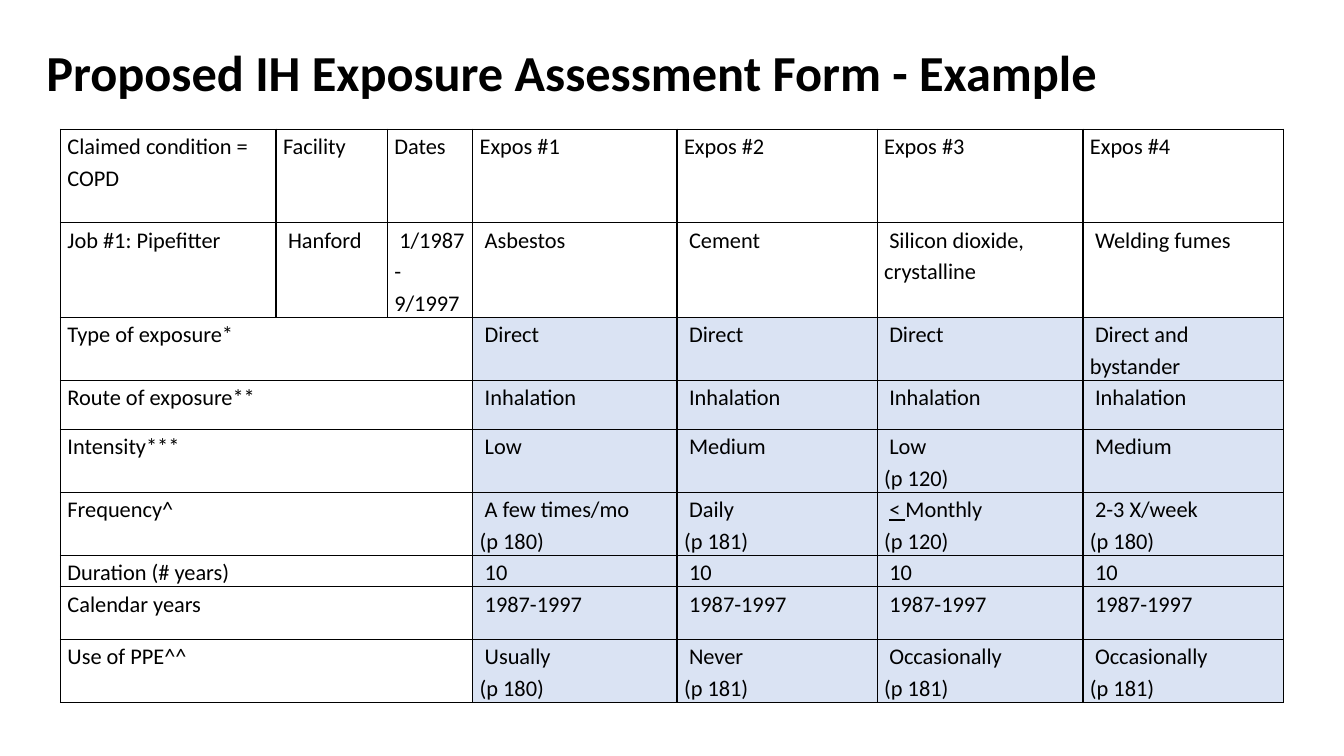
from lxml.etree import SubElement
from pptx import Presentation
from pptx.dml.color import RGBColor
from pptx.enum.text import MSO_ANCHOR
from pptx.oxml.ns import qn
from pptx.util import Pt

BLACK, WHITE, LIGHT_BLUE = "000000", "FFFFFF", "DAE3F3"


def color(value):
    return RGBColor.from_string(value)


def write(frame, text, size=16, bold=False, spacing=1.15, indent=0):
    """Write one paragraph per line; underline what stands between underscores."""
    frame.word_wrap = True
    for number, line in enumerate(text.split("\n")):
        paragraph = frame.paragraphs[0] if number == 0 else frame.add_paragraph()
        paragraph.line_spacing = spacing
        if indent and number == 0:
            paragraph._p.get_or_add_pPr().set("indent", str(Pt(indent)))
        for part, words in enumerate(line.split("_")):
            if not words:
                continue
            run = paragraph.add_run()
            run.text = words
            run.font.name = "Calibri"
            run.font.size = Pt(size)
            run.font.bold = bold
            run.font.underline = part % 2 == 1
            run.font.color.rgb = color(BLACK)


presentation = Presentation()
presentation.slide_width = Pt(960)
presentation.slide_height = Pt(540)
slide = presentation.slides.add_slide(presentation.slide_layouts[6])

title = slide.shapes.add_textbox(Pt(26), Pt(7), Pt(828), Pt(94)).text_frame
title.vertical_anchor = MSO_ANCHOR.MIDDLE
write(title, "Proposed IH Exposure Assessment Form - Example",
      size=36, bold=True, spacing=0.9)

# Rows with five entries have a label that spans the first three columns.
form_rows = [
    (67, ["Claimed condition = COPD", "Facility", "Dates",
          "Expos #1", "Expos #2", "Expos #3", "Expos #4"]),
    (67.5, ["Job #1: Pipefitter", "Hanford", "1/1987- 9/1997", "Asbestos",
            "Cement", "Silicon dioxide, crystalline", "Welding fumes"]),
    (45, ["Type of exposure*", "Direct", "Direct", "Direct",
          "Direct and bystander"]),
    (35, ["Route of exposure**"] + ["Inhalation"] * 4),
    (45, ["Intensity***", "Low", "Medium", "Low\n(p 120)", "Medium"]),
    (45, ["Frequency^", "A few times/mo\n(p 180)", "Daily\n(p 181)",
          "_< _Monthly\n(p 120)", "2-3 X/week\n(p 180)"]),
    (22.5, ["Duration (# years)"] + ["10"] * 4),
    (37.5, ["Calendar years"] + ["1987-1997"] * 4),
    (45, ["Use of PPE^^", "Usually\n(p 180)", "Never\n(p 181)",
          "Occasionally\n(p 181)", "Occasionally\n(p 181)"]),
]
column_widths = [154, 79.5, 61, 146, 143, 147, 143]

form = slide.shapes.add_table(
    len(form_rows), len(column_widths), Pt(43.2), Pt(92.2),
    Pt(sum(column_widths)), Pt(sum(height for height, _ in form_rows))).table
form.first_row = False
form.horz_banding = False
for column, width in zip(form.columns, column_widths):
    column.width = Pt(width)

for row, (height, entries) in enumerate(form_rows):
    form.rows[row].height = Pt(height)
    spans_label = len(entries) == 5
    if spans_label:
        form.cell(row, 0).merge(form.cell(row, 2))
        entries = entries[:1] + ["", ""] + entries[1:]
    for column, entry in enumerate(entries):
        cell = form.cell(row, column)
        cell.margin_left = cell.margin_right = Pt(5)
        cell.margin_top = cell.margin_bottom = 0
        properties = cell._tc.get_or_add_tcPr()
        for side in ("a:lnL", "a:lnR", "a:lnT", "a:lnB"):
            border = SubElement(properties, qn(side), w=str(Pt(1)))
            line_fill = SubElement(border, qn("a:solidFill"))
            SubElement(line_fill, qn("a:srgbClr"), val=BLACK)
        cell.fill.solid()
        is_assessment = spans_label and column >= 3
        cell.fill.fore_color.rgb = color(LIGHT_BLUE if is_assessment else WHITE)
        if not cell.is_spanned:
            write(cell.text_frame, entry, indent=3.6 if row and column else 0)

presentation.save("out.pptx")
